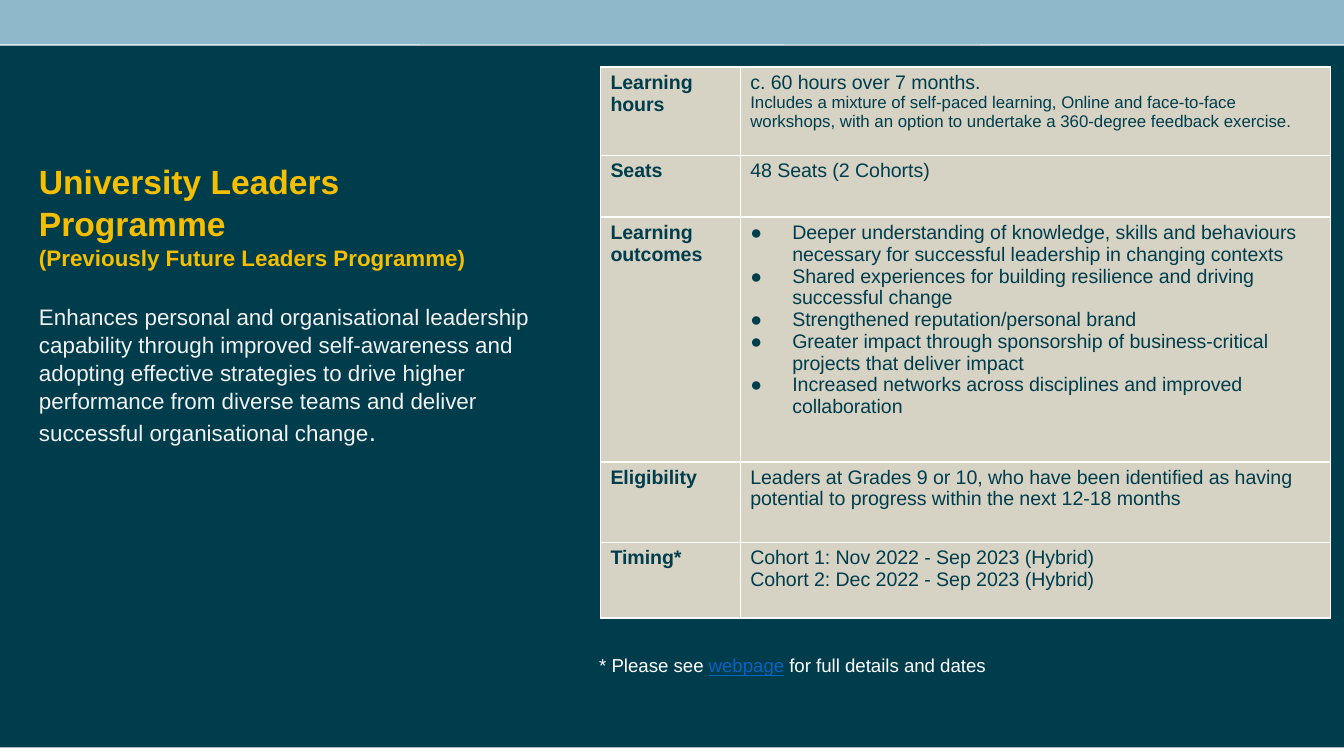
from dataclasses import dataclass

from lxml.etree import SubElement
from pptx import Presentation
from pptx.dml.color import RGBColor as RGB
from pptx.enum.shapes import MSO_SHAPE as Preset
from pptx.enum.text import MSO_ANCHOR as Anchor, MSO_AUTO_SIZE as AutoSize, PP_ALIGN as Align
from pptx.oxml.ns import qn
from pptx.util import Pt


@dataclass(frozen=True)
class Theme:
    font: str = "Arial"
    band: str = "8DB9CA"
    teal: str = "003D4C"
    stone: str = "D6D2C4"
    gold: str = "F6BE00"
    pale: str = "F2F2F2"
    white: str = "FFFFFF"
    link: str = "0563C1"
    heading: float = 18
    body: float = 12
    full_stop: float = 14
    cell: float = 10.5
    detail: float = 9
    note: float = 10


THEME = Theme()
BULLET_INDENT = 22.5

FACTS = [
    ("Learning hours", 47.2, ["c. 60 hours over 7 months."],
     "Includes a mixture of self-paced learning, Online and face-to-face "
     "workshops, with an option to undertake a 360-degree feedback exercise."),
    ("Seats", 33.2, ["48 Seats (2 Cohorts)"], None),
    ("Learning outcomes", 131, [
        "Deeper understanding of knowledge, skills and behaviours necessary "
        "for successful leadership in changing contexts",
        "Shared experiences for building resilience and driving successful change",
        "Strengthened reputation/personal brand",
        "Greater impact through sponsorship of business-critical projects that deliver impact",
        "Increased networks across disciplines and improved collaboration",
    ], None),
    ("Eligibility", 43.2, [
        "Leaders at Grades 9 or 10, who have been identified as having "
        "potential to progress within the next 12-18 months"], None),
    ("Timing*", 40.6, [
        "Cohort 1: Nov 2022 - Sep 2023 (Hybrid)",
        "Cohort 2: Dec 2022 - Sep 2023 (Hybrid)"], None),
]
BULLETED = "Learning outcomes"


def add_run(paragraph, text, size, color, bold=False, underline=False):
    run = paragraph.add_run()
    run.text = text
    font = run.font
    font.name, font.size = THEME.font, Pt(size)
    font.bold, font.underline = bold, underline
    font.color.rgb = RGB.from_string(color)


def next_paragraph(frame, index):
    return frame.add_paragraph() if index else frame.paragraphs[0]


def add_panel(slide, box, color):
    panel = slide.shapes.add_shape(Preset.RECTANGLE, *map(Pt, box))
    panel.shadow.inherit = False
    panel.fill.solid()
    panel.fill.fore_color.rgb = RGB.from_string(color)
    panel.line.fill.background()


def add_backdrop(slide, box):
    left, top, width, height = box
    band_width = 300
    for offset in (225, 0, width - band_width):
        add_panel(slide, (left + offset, top, band_width, 23.8), THEME.band)
    add_panel(slide, (left, top + 24.5, width, height - 24.5), THEME.teal)


def add_introduction(slide, box):
    title = slide.shapes.title
    slide.shapes._spTree.append(title._element)
    title.left, title.top, title.width, title.height = map(Pt, box)
    frame = title.text_frame
    frame.word_wrap = True
    frame.auto_size = AutoSize.NONE
    frame.vertical_anchor = Anchor.TOP
    parts = [
        (0, [("University Leaders Programme", THEME.heading, THEME.gold, True)]),
        (0, [("(Previously Future Leaders Programme)", THEME.body, THEME.gold, True)]),
        (16.5, [
            ("Enhances personal and organisational leadership capability through "
             "improved self-awareness and adopting effective strategies to drive "
             "higher performance from diverse teams and deliver successful "
             "organisational change", THEME.body, THEME.pale),
            (".", THEME.full_stop, THEME.pale)]),
    ]
    for index, (gap, runs) in enumerate(parts):
        paragraph = next_paragraph(frame, index)
        paragraph.alignment = Align.LEFT
        paragraph.line_spacing = 1.04
        if index:
            paragraph.space_before = Pt(gap)
        for run in runs:
            add_run(paragraph, *run)


def add_bullet(paragraph):
    properties = paragraph._p.get_or_add_pPr()
    properties.set("marL", str(Pt(BULLET_INDENT)))
    properties.set("indent", str(-Pt(BULLET_INDENT)))
    color = SubElement(properties, qn("a:buClr"))
    SubElement(color, qn("a:srgbClr"), val=THEME.teal)
    SubElement(properties, qn("a:buFont"), typeface=THEME.font)
    SubElement(properties, qn("a:buChar"), char="●")


def style_cell(cell):
    cell.margin_left = cell.margin_right = Pt(5.3)
    cell.margin_top = cell.margin_bottom = Pt(2.6)
    cell.vertical_anchor = Anchor.TOP
    properties = cell._tc.get_or_add_tcPr()
    for side in ("a:lnL", "a:lnR", "a:lnT", "a:lnB"):
        border = SubElement(properties, qn(side), w=str(Pt(1)))
        fill = SubElement(border, qn("a:solidFill"))
        SubElement(fill, qn("a:srgbClr"), val=THEME.white)
    cell.fill.solid()
    cell.fill.fore_color.rgb = RGB.from_string(THEME.stone)


def fill_cell(cell, lines, bold=False, bulleted=False, detail=None):
    style_cell(cell)
    entries = [(line, THEME.cell) for line in lines]
    if detail:
        entries.append((detail, THEME.detail))
    for index, (text, size) in enumerate(entries):
        paragraph = next_paragraph(cell.text_frame, index)
        if bulleted:
            add_bullet(paragraph)
        add_run(paragraph, text, size, THEME.teal, bold)


def add_facts(slide, box):
    facts = slide.shapes.add_table(len(FACTS), 2, *map(Pt, box)).table
    facts.first_row = facts.horz_banding = False
    label_width = 74.9
    facts.columns[0].width = Pt(label_width)
    facts.columns[1].width = Pt(box[2] - label_width)
    for index, (label, height, lines, detail) in enumerate(FACTS):
        facts.rows[index].height = Pt(height)
        fill_cell(facts.cell(index, 0), [label], bold=True)
        fill_cell(facts.cell(index, 1), lines, bulleted=label == BULLETED, detail=detail)


def add_footnote(slide, box):
    frame = slide.shapes.add_textbox(*map(Pt, box)).text_frame
    frame.word_wrap = True
    paragraph = frame.paragraphs[0]
    add_run(paragraph, "* Please see ", THEME.note, THEME.white)
    add_run(paragraph, "webpage", THEME.note, THEME.link, underline=True)
    add_run(paragraph, " for full details and dates", THEME.note, THEME.white)


def main():
    deck = Presentation()
    deck.slide_width, deck.slide_height = Pt(720), Pt(405)
    slide = deck.slides.add_slide(deck.slide_layouts[5])
    add_backdrop(slide, (0, 0, 720, 400.5))
    add_facts(slide, (321.8, 36, 391, 295.2))
    add_introduction(slide, (13.7, 81.8, 279.4, 179.3))
    add_footnote(slide, (313.9, 347, 303.8, 19.4))
    deck.save("out.pptx")


if __name__ == "__main__":
    main()
